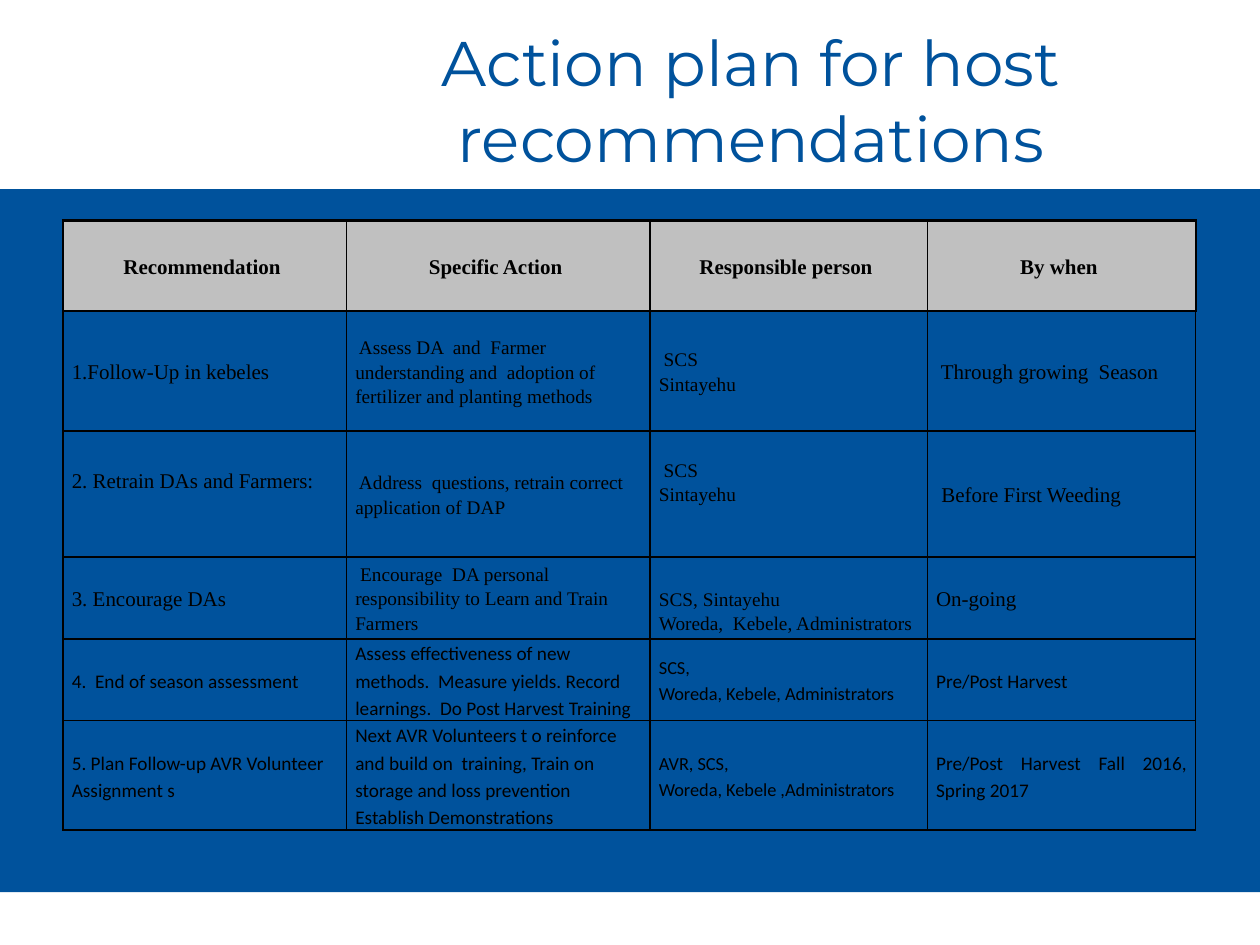
import dataclasses

import lxml.etree
import pptx
import pptx.dml.color
import pptx.enum.shapes
import pptx.enum.text
import pptx.oxml.ns
import pptx.util

Inches = pptx.util.Inches
Pt = pptx.util.Pt
Align = pptx.enum.text.PP_ALIGN
Anchor = pptx.enum.text.MSO_ANCHOR


@dataclasses.dataclass(frozen=True)
class Theme:
    blue: str = "00529C"
    gray: str = "C0C0C0"
    black: str = "000000"
    title_font: str = "Montserrat"
    serif: str = "Times New Roman"
    sans: str = "Calibri"
    title_size: float = 36
    header_size: float = 12
    serif_sizes: tuple = (12, 11, 11, 12)
    sans_sizes: tuple = (11, 11, 10.5, 11)
    line_spacing: float = 1.15
    thin: float = 1
    thick: float = 1.5


HEADERS = ["Recommendation ", "Specific Action ", "Responsible person ", "By when "]
COLUMN_WIDTHS = [2.25, 2.41, 2.2, 2.13]
ROW_HEIGHTS = [0.72, 0.95, 1, 0.65, 0.65, 0.65]
COLUMN_ALIGNMENTS = [Align.LEFT, Align.LEFT, Align.LEFT, Align.JUSTIFY]
COLUMN_HANGING = [0, 0, 0.25, 0]
# Each cell is a list of paragraphs.
ACTIONS = [
    [["1.Follow-Up in kebeles"],
     [" Assess DA  and  Farmer understanding and  adoption of fertilizer and planting methods"],
     [" SCS", "Sintayehu"],
     [" Through growing  Season"]],
    [["2. Retrain DAs and Farmers:"],
     [" Address  questions, retrain correct application of DAP"],
     [" SCS", "Sintayehu"],
     [" Before First Weeding"]],
    [["3. Encourage DAs"],
     [" Encourage  DA personal responsibility to Learn and Train Farmers"],
     ["SCS, Sintayehu", "Woreda,  Kebele, Administrators"],
     ["On-going"]],
    [["4.  End of season assessment"],
     ["Assess effectiveness of new methods.  Measure yields. Record learnings.  "
      "Do Post Harvest Training"],
     ["SCS,", "Woreda, Kebele, Administrators"],
     ["Pre/Post Harvest"]],
    [["5. Plan Follow-up AVR Volunteer Assignment s"],
     ["Next AVR Volunteers t o reinforce  and build on  training, "
      "Train on storage and loss prevention",
      "Establish Demonstrations"],
     ["AVR, SCS,", "Woreda, Kebele ,Administrators"],
     ["Pre/Post Harvest Fall 2016, Spring 2017"]],
]


def color(value):
    return pptx.dml.color.RGBColor.from_string(value)


class SlideBuilder:
    def __init__(self, slide, theme):
        self.slide = slide
        self.theme = theme

    def add_run(self, paragraph, text, font_name, size, font_color, bold=False):
        run = paragraph.add_run()
        run.text = text
        run.font.name = font_name
        run.font.size = Pt(size)
        run.font.bold = bold
        run.font.color.rgb = color(font_color)

    def band(self, left, top, width, height):
        shape = self.slide.shapes.add_shape(
            pptx.enum.shapes.MSO_SHAPE.RECTANGLE,
            Inches(left), Inches(top), Inches(width), Inches(height))
        shape.shadow.inherit = False
        shape.fill.solid()
        shape.fill.fore_color.rgb = color(self.theme.blue)
        shape.line.fill.background()

    def title(self, text, left, top, width, height):
        title = self.slide.shapes.title
        title.left, title.top = Inches(left), Inches(top)
        title.width, title.height = Inches(width), Inches(height)
        frame = title.text_frame
        frame.word_wrap = True
        frame.auto_size = pptx.enum.text.MSO_AUTO_SIZE.NONE
        frame.vertical_anchor = Anchor.MIDDLE
        paragraph = frame.paragraphs[0]
        paragraph.alignment = Align.CENTER
        self.add_run(paragraph, text, self.theme.title_font,
                     self.theme.title_size, self.theme.blue)

    def table(self, left, top, column_widths, row_heights):
        frame = self.slide.shapes.add_table(
            len(row_heights), len(column_widths), Inches(left), Inches(top),
            Inches(sum(column_widths)), Inches(sum(row_heights)))
        table = frame.table
        table.first_row = False
        table.horz_banding = False
        for column, width in zip(table.columns, column_widths):
            column.width = Inches(width)
        for row, height in zip(table.rows, row_heights):
            row.height = Inches(height)
        return table

    def borders(self, cell, **widths):
        """Draw the sides named L, R, T and B; call before setting the fill."""
        properties = cell._tc.get_or_add_tcPr()
        for side in "LRTB":
            line = lxml.etree.SubElement(
                properties, pptx.oxml.ns.qn(f"a:ln{side}"), w=str(Pt(widths[side])))
            fill = lxml.etree.SubElement(line, pptx.oxml.ns.qn("a:solidFill"))
            lxml.etree.SubElement(fill, pptx.oxml.ns.qn("a:srgbClr"), val=self.theme.black)

    def cell(self, cell, texts, font_name, size, alignment, hanging=0, bold=False):
        cell.vertical_anchor = Anchor.MIDDLE
        cell.margin_left = cell.margin_right = Inches(0.07)
        cell.margin_top = cell.margin_bottom = 0
        for index, text in enumerate(texts):
            frame = cell.text_frame
            paragraph = frame.add_paragraph() if index else frame.paragraphs[0]
            paragraph.alignment = alignment
            paragraph.line_spacing = self.theme.line_spacing
            if hanging:
                properties = paragraph._p.get_or_add_pPr()
                properties.set("marL", str(Inches(hanging)))
                properties.set("indent", str(-Inches(hanging)))
            self.add_run(paragraph, text, font_name, size, self.theme.black, bold)

    def header_row(self, table, headers):
        thin, thick = self.theme.thin, self.theme.thick
        last = len(headers) - 1
        for column, text in enumerate(headers):
            cell = table.cell(0, column)
            self.cell(cell, [text], self.theme.serif, self.theme.header_size,
                      Align.CENTER, bold=True)
            self.borders(cell, L=thin if column else thick,
                         R=thick if column == last else thin, T=thick, B=thick)
            cell.fill.solid()
            cell.fill.fore_color.rgb = color(self.theme.gray)

    def body_row(self, table, row, contents, font_name, sizes):
        thin, thick = self.theme.thin, self.theme.thick
        for column, texts in enumerate(contents):
            cell = table.cell(row, column)
            self.cell(cell, texts, font_name, sizes[column],
                      COLUMN_ALIGNMENTS[column], COLUMN_HANGING[column])
            self.borders(cell, L=thin, R=thin, T=thick if row == 1 else thin, B=thin)
            cell.fill.background()


def main():
    presentation = pptx.Presentation()
    presentation.slide_width = Inches(10)
    presentation.slide_height = Inches(7.5)
    theme = Theme()
    slide = presentation.slides.add_slide(presentation.slide_layouts[5])
    builder = SlideBuilder(slide, theme)

    builder.band(0, 1.5, 10, 5.58)
    builder.title("Action plan for host recommendations", 2.25, 0.33, 7.42, 0.92)
    table = builder.table(0.5, 1.75, COLUMN_WIDTHS, ROW_HEIGHTS)
    builder.header_row(table, HEADERS)
    for row, contents in enumerate(ACTIONS, start=1):
        if row <= 3:
            builder.body_row(table, row, contents, theme.serif, theme.serif_sizes)
        else:
            builder.body_row(table, row, contents, theme.sans, theme.sans_sizes)

    # Three cells sit off the middle of their rows.
    table.cell(2, 0).margin_bottom = Inches(0.22)
    table.cell(2, 2).margin_bottom = Inches(0.2)
    table.cell(3, 2).margin_top = Inches(0.2)

    presentation.save("out.pptx")


if __name__ == "__main__":
    main()
